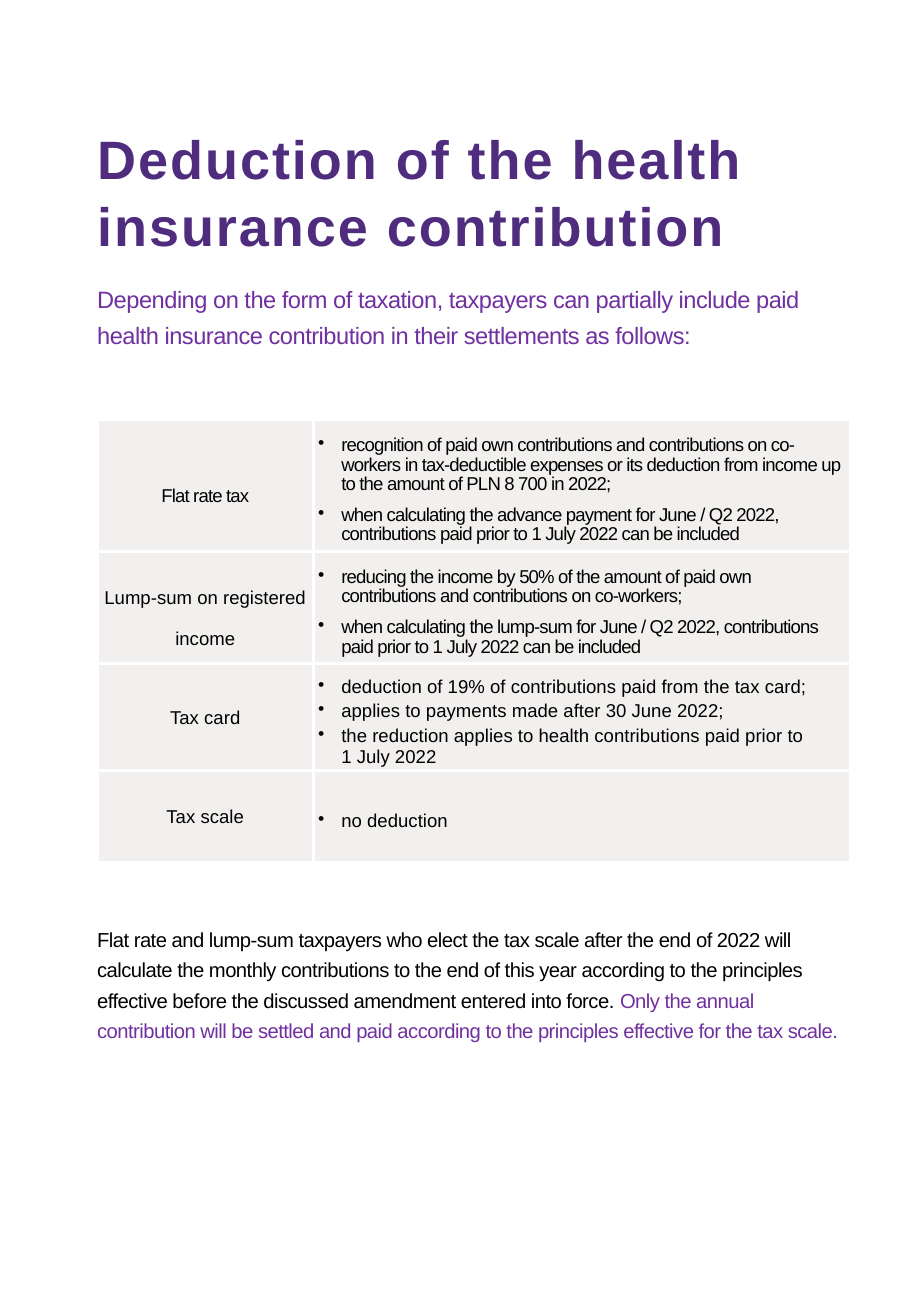
from dataclasses import dataclass
from lxml.etree import SubElement
from pptx import Presentation
from pptx.dml.color import RGBColor
from pptx.enum.text import MSO_ANCHOR, PP_ALIGN
from pptx.oxml.ns import qn
from pptx.util import Pt

PX = 9144


@dataclass(frozen=True)
class Theme:
    """Colours, font and type sizes of the slide."""
    font: str = "Arial"
    title: str = "4F2C7E"
    accent: str = "7030A0"
    ink: str = "000000"
    cell: str = "F2F0EE"
    rule: str = "FFFFFF"
    head: int = 32
    lead: int = 14
    body: int = 12
    small: int = 11


THEME = Theme()
ROWS = [
    (109, "Flat rate tax", 2, -0.5, -0.5, 6.5, 0.95, [
        "recognition of paid own contributions and contributions on co-workers in "
        "tax-deductible expenses or its deduction from income up to the amount of "
        "PLN 8 700 in 2022;",
        "when calculating the advance payment for June / Q2 2022, contributions paid "
        "prior to 1 July 2022 can be included"]),
    (92, "Lump-sum on registered\nincome", 2, 0, -0.5, 6.5, 0.95, [
        "reducing the income by 50% of the amount of paid own contributions and "
        "contributions on co-workers;",
        "when calculating the lump-sum for June / Q2 2022, contributions paid prior to "
        "1 July 2022 can be included"]),
    (88, "Tax card", 1, 0, 0, 2.4, 1, [
        "deduction of 19% of contributions paid from the tax card;",
        "applies to payments made after 30 June 2022;",
        "the reduction applies to health contributions paid prior to\n1 July 2022"]),
    (76, "Tax scale", 1, 0, 0, 2.4, 1, ["no deduction"]),
]


def style(para, size, color, track=0, lead=1, before=0, bold=False):
    """Set the font, tracking and spacing of a paragraph."""
    font = para.font
    font.name, font.size, font.bold = THEME.font, Pt(size), bold
    font.color.rgb = RGBColor.from_string(color)
    font._element.set("spc", str(round(track * 100)))
    para.line_spacing, para.space_before = lead, Pt(before)


def inset(item, left, top, right, bottom):
    """Set the four margins of a text frame or cell."""
    item.margin_left, item.margin_top = left * PX, top * PX
    item.margin_right, item.margin_bottom = right * PX, bottom * PX


def add_text(slide, box, text, size, color, **look):
    """Place one wrapped paragraph in a box and return it."""
    frame = slide.shapes.add_textbox(*(n * PX for n in box)).text_frame
    frame.word_wrap = True
    inset(frame, 0, 1, 0, 0)
    para = frame.paragraphs[0]
    para.text = text
    style(para, size, color, **look)
    return para


def add_close(slide, box):
    """Place the closing paragraph with its accented last sentence."""
    para = add_text(
        slide, box,
        "Flat rate and lump-sum taxpayers who elect the tax scale after the end of 2022 "
        "will calculate the monthly contributions to the end of this year according to "
        "the principles effective before the discussed amendment entered into force. ",
        THEME.body, THEME.ink, track=-0.3, lead=1.25, before=1)
    run = para.add_run()
    run.text = ("Only the annual contribution will be settled and paid according to "
                "the principles effective for the tax scale.")
    run.font.color.rgb = RGBColor.from_string(THEME.accent)


def dress(cell):
    """Give a cell its white borders, fill and anchor."""
    props = cell._tc.get_or_add_tcPr()
    for side in ("a:lnL", "a:lnR", "a:lnT", "a:lnB"):
        line = SubElement(props, qn(side), w=str(Pt(2.25)))
        fill = SubElement(line, qn("a:solidFill"))
        SubElement(fill, qn("a:srgbClr"), val=THEME.rule)
    cell.fill.solid()
    cell.fill.fore_color.rgb = RGBColor.from_string(THEME.cell)
    cell.vertical_anchor = MSO_ANCHOR.MIDDLE


def add_points(cell, points, track, before, lead):
    """Fill a cell with bulleted points."""
    frame = cell.text_frame
    for spot, point in enumerate(points):
        para = frame.add_paragraph() if spot else frame.paragraphs[0]
        para.text = point
        style(para, THEME.small, THEME.ink, track, lead, before)
        props = para._p.get_or_add_pPr()
        props.set("marL", str(19 * PX))
        props.set("indent", str(-19 * PX))
        mark = props.makeelement(qn("a:buChar"), {"char": "•"})
        props.find(qn("a:defRPr")).addprevious(mark)


def add_rates(slide, box):
    """Place the table of tax forms and their deductions."""
    left, top, width, height = (n * PX for n in box)
    table = slide.shapes.add_table(len(ROWS), 2, left, top, width, height).table
    table.first_row = table.horz_banding = False
    table.columns[0].width = 178 * PX
    table.columns[1].width = width - 178 * PX
    for spot, (tall, name, pitch, tight, track, before, lead, points) in enumerate(ROWS):
        table.rows[spot].height = tall * PX
        label, body = table.cell(spot, 0), table.cell(spot, 1)
        dress(label)
        dress(body)
        inset(label, 3, 1, 3, 0)
        inset(body, 4, 8, 4, 0)
        para = label.text_frame.paragraphs[0]
        para.text = name
        para.alignment = PP_ALIGN.CENTER
        style(para, THEME.small, THEME.ink, tight, pitch)
        add_points(body, points, track, before, lead)


def main():
    """Build the slide and save it."""
    deck = Presentation()
    deck.slide_width, deck.slide_height = 750 * PX, 1083 * PX
    slide = deck.slides.add_slide(deck.slide_layouts[6])
    add_text(slide, (80, 101, 620, 110), "Deduction of the health insurance contribution",
             THEME.head, THEME.title, track=1.2, lead=1.03, bold=True)
    add_text(slide, (80, 228, 620, 85),
             "Depending on the form of taxation, taxpayers can partially include paid "
             "health insurance contribution in their settlements as follows:",
             THEME.lead, THEME.accent, track=-0.3, lead=1.25, before=1)
    add_rates(slide, (80, 345, 620, sum(row[0] for row in ROWS)))
    add_close(slide, (80, 757, 620, 98))
    deck.save("out.pptx")


if __name__ == "__main__":
    main()
